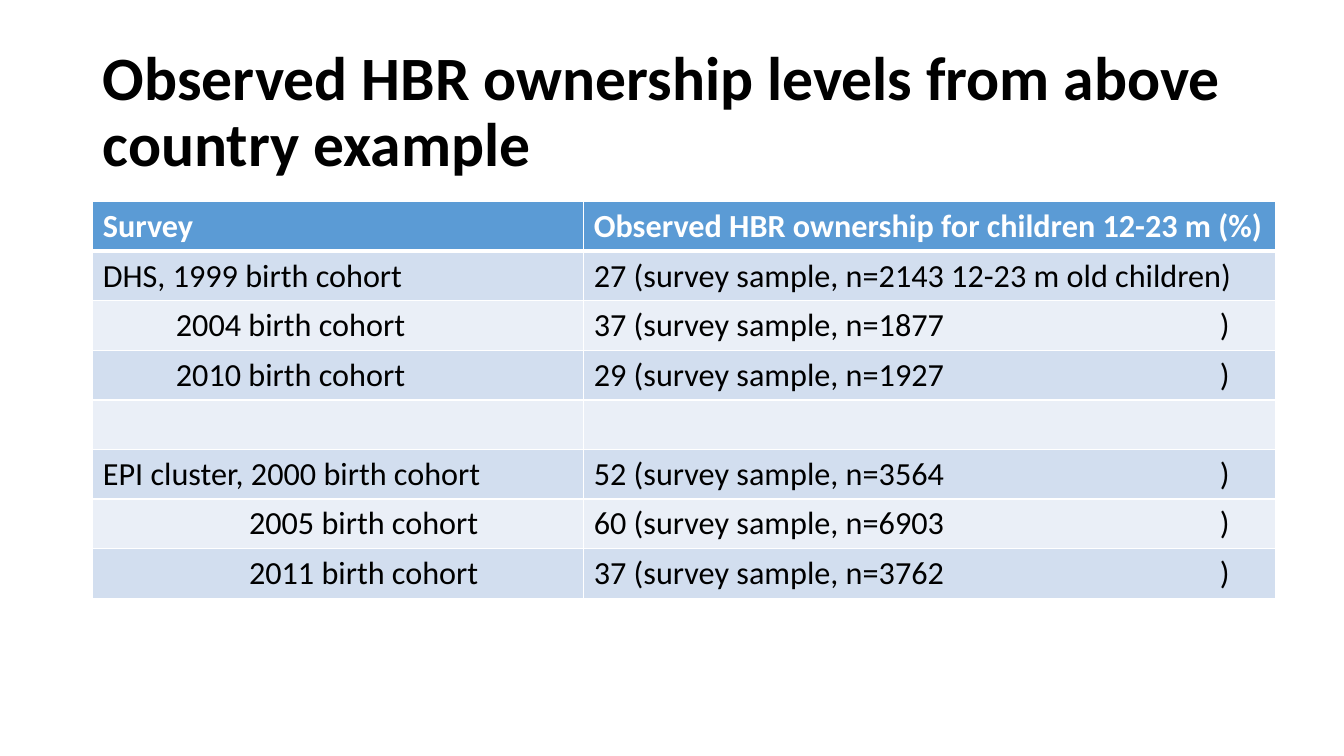
"""Build the slide on observed HBR ownership levels by survey."""
from lxml import etree
from pptx import Presentation
from pptx.dml.color import RGBColor
from pptx.enum.text import MSO_ANCHOR, MSO_AUTO_SIZE, PP_ALIGN
from pptx.oxml.ns import qn
from pptx.util import Inches, Pt

LEFT, MIDDLE, NO_FIT = PP_ALIGN.LEFT, MSO_ANCHOR.MIDDLE, MSO_AUTO_SIZE.NONE

TITLE = "Observed HBR ownership levels from above country example"
HEADER = ("Survey", "Observed HBR ownership for children 12-23 m (%)")
SURVEYS = [
    (0, "DHS, 1999 birth cohort", "27 (survey sample, n=2143 12-23 m old children)"),
    (1, "2004 birth cohort", "37 (survey sample, n=1877\t)"),
    (1, "2010 birth cohort", "29 (survey sample, n=1927\t)"),
    (0, "", ""),
    (0, "EPI cluster, 2000 birth cohort", "52 (survey sample, n=3564\t)"),
    (2, "2005 birth cohort", "60 (survey sample, n=6903\t)"),
    (2, "2011 birth cohort", "37 (survey sample, n=3762\t)"),
]
COLORS = {"header": "5B9BD5", "odd": "D2DEEF", "even": "EAEFF7",
          "white": "FFFFFF", "black": "000000"}
TITLE_FONT = {"name": "Calibri", "size": Pt(44), "bold": True}
HEADER_FONT = {"name": "Calibri", "size": Pt(23), "bold": True}
BODY_FONT = {"name": "Calibri", "size": Pt(23), "bold": False}
SLIDE_W, SLIDE_H = 13.33, 7.5
MARGIN = 0.92
TABLE_TOP, ROW_H = 2, 0.49
COLUMNS = (4.87, 6.86)
INDENT, BRACKET_TAB = 0.725, 6.21


def format_font(font, values, color):
    for attribute, value in values.items():
        setattr(font, attribute, value)
    font.color.rgb = RGBColor.from_string(COLORS[color])


def add_borders(cell, widths):
    properties = cell._tc.get_or_add_tcPr()
    for position, (side, width) in enumerate(widths.items()):
        border = etree.Element(qn(f"a:ln{side}"), w=str(Pt(width)))
        fill = etree.SubElement(border, qn("a:solidFill"))
        etree.SubElement(fill, qn("a:srgbClr"), val=COLORS["white"])
        properties.insert(position, border)


def add_tab(paragraph, position):
    stops = etree.SubElement(paragraph._p.get_or_add_pPr(), qn("a:tabLst"))
    etree.SubElement(stops, qn("a:tab"), pos=str(Inches(position)), algn="l")


def add_title(slide):
    title = slide.shapes.title
    title.left, title.top = Inches(MARGIN), Inches(0.4)
    title.width, title.height = Inches(11.5), Inches(1.45)
    frame = title.text_frame
    frame.text = TITLE
    frame.auto_size, frame.vertical_anchor, frame.word_wrap = NO_FIT, MIDDLE, True
    paragraph = frame.paragraphs[0]
    paragraph.alignment, paragraph.line_spacing = LEFT, 0.9
    format_font(paragraph.runs[0].font, TITLE_FONT, "black")


def add_ownership_table(slide):
    rows = [(0, *HEADER)] + SURVEYS
    table = slide.shapes.add_table(
        len(rows), len(COLUMNS), Inches(MARGIN), Inches(TABLE_TOP),
        Inches(sum(COLUMNS)), Inches(ROW_H * len(rows))).table
    for column, width in zip(table.columns, COLUMNS):
        column.width = Inches(width)
    for r, (level, *texts) in enumerate(rows):
        table.rows[r].height = Inches(ROW_H)
        shade = "header" if r == 0 else "odd" if r % 2 else "even"
        for c, text in enumerate(texts):
            cell = table.cell(r, c)
            cell.fill.solid()
            cell.fill.fore_color.rgb = RGBColor.from_string(COLORS[shade])
            add_borders(cell, {"L": 1, "R": 1, "T": 3 if r == 1 else 1,
                               "B": 3 if r == 0 else 1})
            if c == 0:
                cell.margin_left = Inches(0.1 + level * INDENT)
            cell.text = text
            paragraph = cell.text_frame.paragraphs[0]
            if "\t" in text:
                add_tab(paragraph, BRACKET_TAB)
            for run in paragraph.runs:
                format_font(run.font, BODY_FONT if r else HEADER_FONT,
                            "black" if r else "white")


def main():
    deck = Presentation()
    deck.slide_width, deck.slide_height = Inches(SLIDE_W), Inches(SLIDE_H)
    slide = deck.slides.add_slide(deck.slide_layouts.get_by_name("Title Only"))
    add_title(slide)
    add_ownership_table(slide)
    deck.save("out.pptx")


if __name__ == "__main__":
    main()
